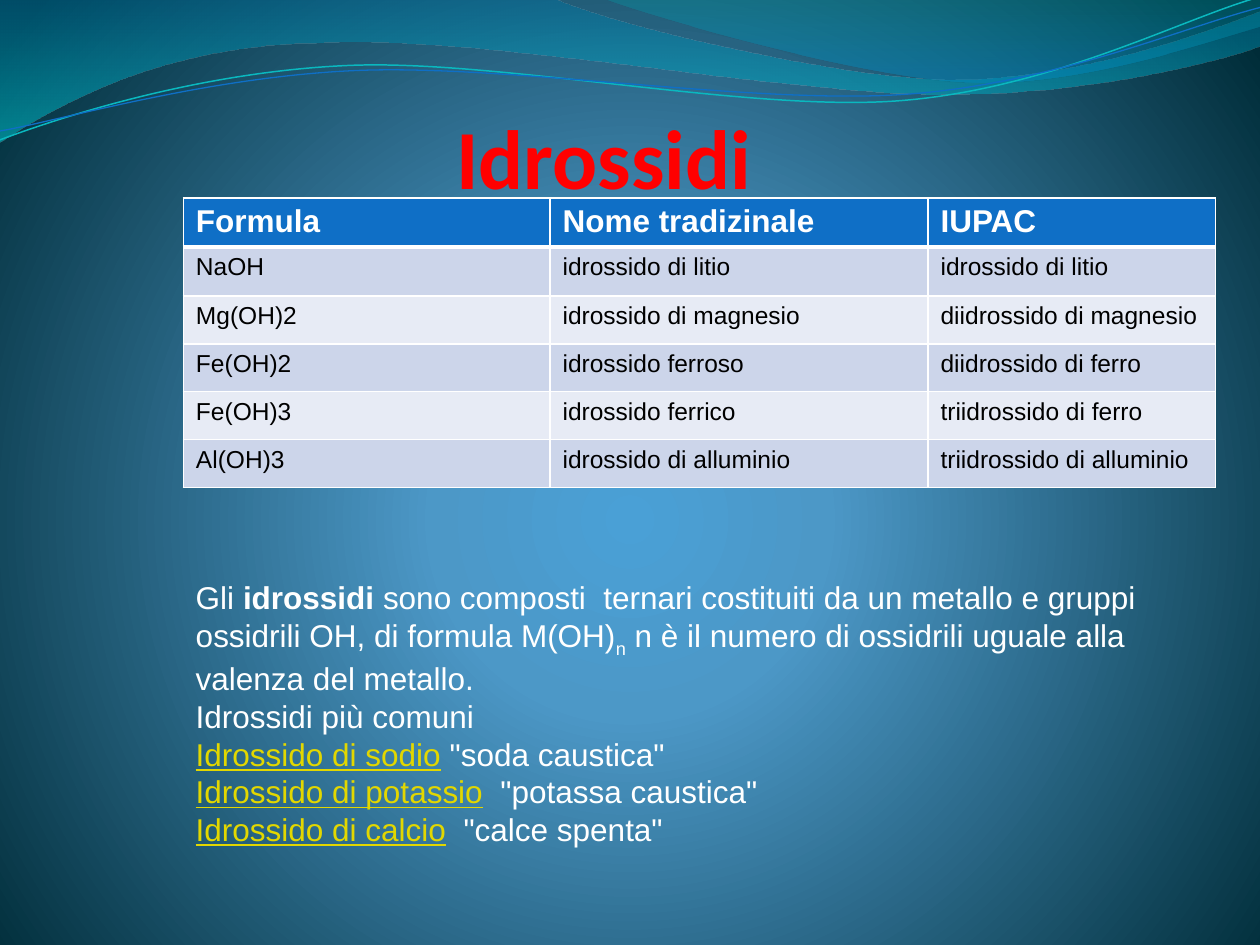
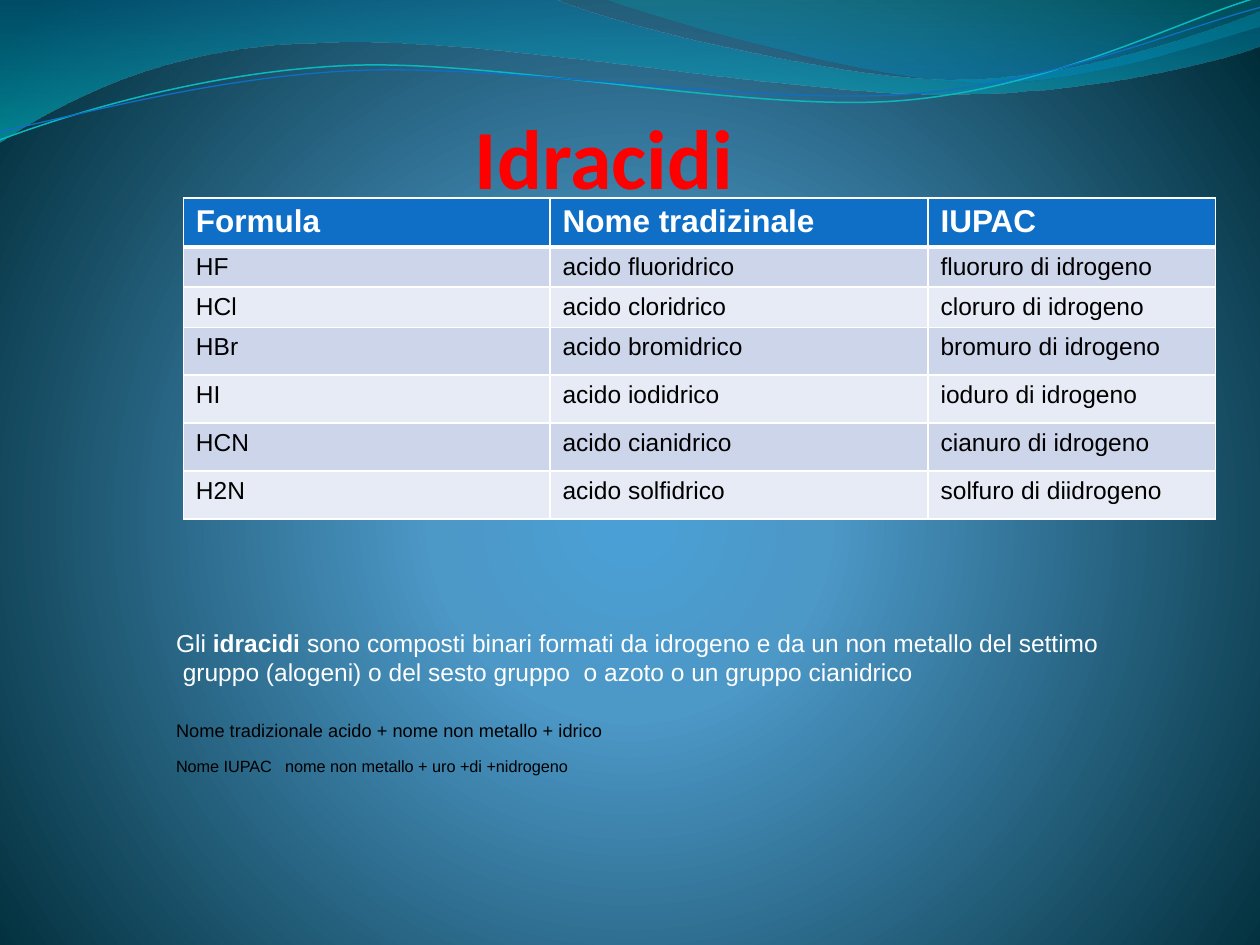
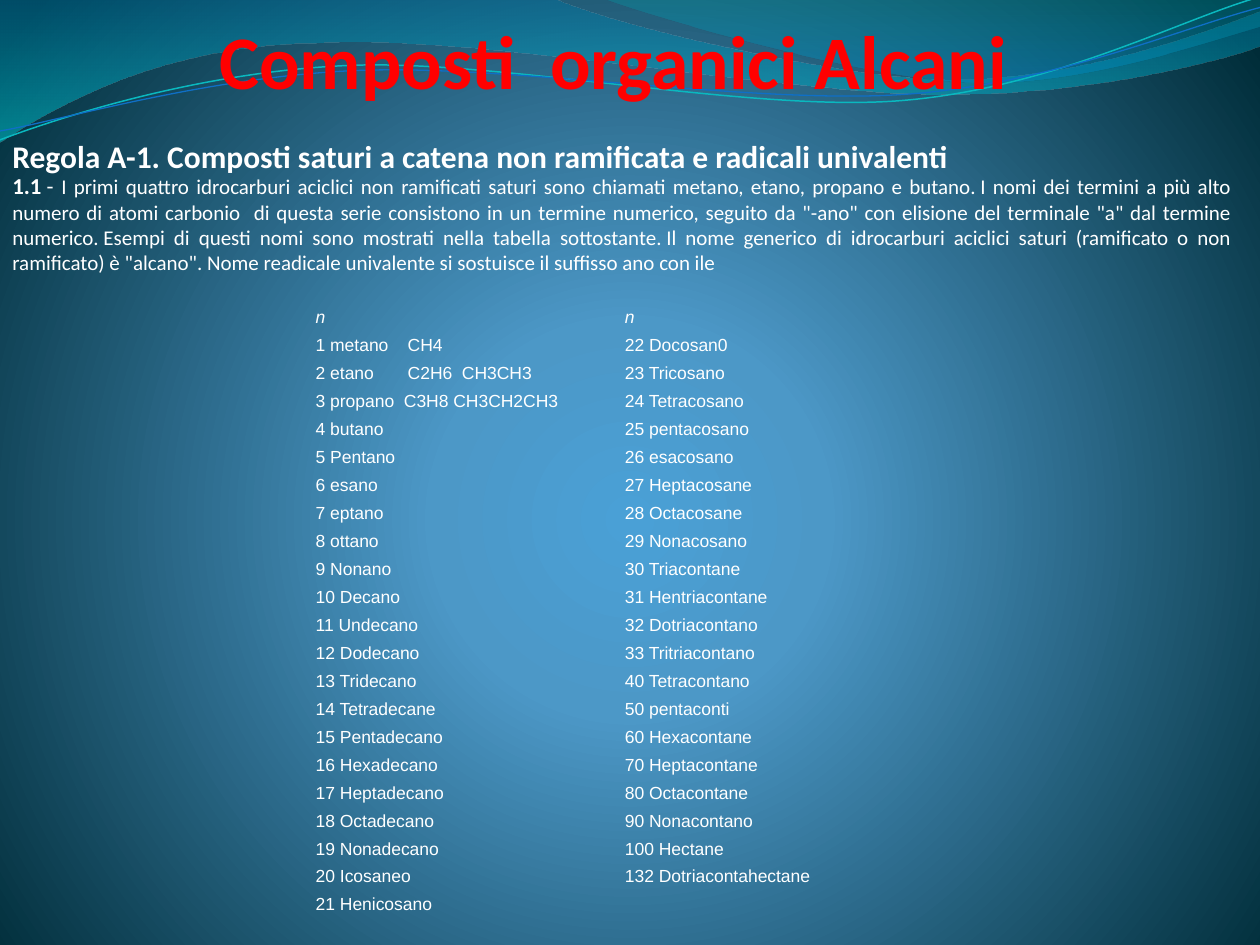
from dataclasses import dataclass
from itertools import zip_longest
from math import cos, radians, sin
from typing import Optional

from lxml.etree import SubElement
from pptx import Presentation
from pptx.dml.color import RGBColor
from pptx.enum.text import MSO_ANCHOR, MSO_AUTO_SIZE, PP_ALIGN
from pptx.oxml import parse_xml
from pptx.oxml.ns import nsdecls, qn
from pptx.util import Pt

COLORS = {
    "title": "FF0000", "white": "FFFFFF", "black": "000000", "link": "E2D700",
    "header": "0F6FC6", "band_dark": "CCD5EA", "band_light": "E7EBF5",
    "center": "4AA0D6", "middle": "4C98C7", "edge": "002C38",
    "wave_blue": "0074A1", "wave_teal": "00C6CF",
    "crest_teal": "00A1A9", "crest_blue": "008BBF",
    "line_teal": "0AB8BF", "line_blue": "0F6FC6",
}
NO_GRID_STYLE = "{2D5ABB26-0587-4C30-8999-92F81FD0307C}"
HARD_SPACE = chr(160)
WAVE_TILT = 357.3
DOWNWARD = '<a:lin ang="5400000" scaled="0"/>'
CIRCULAR = ('<a:path path="circle"><a:fillToRect l="10000" t="110000" '
            'r="10000" b="100000"/></a:path>')
COMPOUND_HEADER = ("Formula", "Nome tradizinale", "IUPAC")


@dataclass
class Box:
    left: float
    top: float
    width: float
    height: float

    def lengths(self) -> tuple:
        return Pt(self.left), Pt(self.top), Pt(self.width), Pt(self.height)


@dataclass
class Stop:
    position: int
    color: str
    opacity: int = 100


@dataclass
class Wave:
    start: tuple
    segments: list
    stops: Optional[list] = None
    line_color: str = ""
    line_width: float = 0
    center: tuple = (0, 0)
    rotation: float = 0


@dataclass
class Span:
    text: str
    size: float
    color: str = "white"
    bold: bool = False
    italic: bool = False
    underline: bool = False
    baseline: int = 0
    font: str = "Arial"


@dataclass
class Block:
    spans: list
    align: PP_ALIGN = PP_ALIGN.LEFT
    space_before: float = 0


TITLE_BOX = Box(42, 44.6, 618.5, 73.5)
WAVES = [
    Wave((0, -0.7), [
        (316.8, -0.7),
        (342.7, 12.2, 478.1, 45.4, 545.8, 45.4),
        (614.2, 45.4, 689.8, 18.7, 720, 6.5),
        (720.7, 25.9),
        (707.8, 31.7, 626.4, 54.7, 537.1, 54),
        (447.8, 54, 275, 20.2, 185, 24.5),
        (92.9, 25.2, 33.1, 59.8, -0.7, 81.4),
        (0, -0.7),
    ], stops=[Stop(0, "wave_blue", 45), Stop(100, "wave_teal", 55)]),
    Wave((344.9, -0.7), [
        (366.5, 7.9, 491, 44.6, 553.7, 46.8),
        (616.3, 49.7, 691.9, 23, 720, 15.1),
        (720, 0),
        (344.9, -0.7),
    ], stops=[Stop(0, "crest_teal", 30), Stop(80, "crest_blue", 45)]),
    Wave((0, 79.9), [
        (34.6, 67, 113.8, 41, 199.4, 37.4),
        (284.4, 33.8, 427, 64.1, 513.4, 57.6),
        (599.8, 51.1, 675.4, 10.8, 718.6, -1.4),
    ], line_color="line_teal", line_width=0.85,
        center=(359.3, 41.4), rotation=WAVE_TILT),
    Wave((0, 74.9), [
        (33.8, 69.1, 118.1, 43.9, 203.8, 40.3),
        (290.2, 36.7, 429.8, 59.8, 516.2, 54),
        (601.9, 48.2, 677.5, 15.1, 720, 4.3),
    ], line_color="line_blue", line_width=0.75,
        center=(359.6, 42.5), rotation=WAVE_TILT),
]

HYDROXIDES = [
    ("NaOH", "idrossido di litio", "idrossido di litio"),
    ("Mg(OH)2", "idrossido di magnesio", "diidrossido di magnesio"),
    ("Fe(OH)2", "idrossido ferroso", "diidrossido di ferro"),
    ("Fe(OH)3", "idrossido ferrico", "triidrossido di ferro"),
    ("Al(OH)3", "idrossido di alluminio", "triidrossido di alluminio"),
]
HYDRACIDS = [
    ("HF", "acido fluoridrico", "fluoruro di idrogeno"),
    ("HCl", "acido cloridrico", "cloruro di idrogeno"),
    ("HBr", "acido bromidrico", "bromuro di idrogeno"),
    ("HI", "acido iodidrico", "ioduro di idrogeno"),
    ("HCN", "acido cianidrico", "cianuro di idrogeno"),
    ("H2N", "acido solfidrico", "solfuro di diidrogeno"),
]
COMMON_HYDROXIDES = [
    ("Idrossido di sodio", f'{HARD_SPACE}"soda caustica"'),
    ("Idrossido di potassio", f'{HARD_SPACE} "potassa caustica"'),
    ("Idrossido di calcio", f'{HARD_SPACE} "calce spenta"'),
]
ALKANES_LEFT = [
    "n", "1 metano    CH4", "2 etano       C2H6  CH3CH3",
    "3 propano  C3H8 CH3CH2CH3", "4 butano", "5 Pentano", "6 esano",
    "7 eptano", "8 ottano", "9 Nonano", "10 Decano", "11 Undecano",
    "12 Dodecano", "13 Tridecano", "14 Tetradecane", "15 Pentadecano",
    "16 Hexadecano", "17 Heptadecano", "18 Octadecano", "19 Nonadecano",
    "20 Icosaneo", "21 Henicosano",
]
ALKANES_RIGHT = [
    "n", "22 Docosan0", "23 Tricosano", "24 Tetracosano", "25 pentacosano",
    "26 esacosano", "27 Heptacosane", "28 Octacosane", "29 Nonacosano",
    "30 Triacontane", "31 Hentriacontane", "32 Dotriacontano",
    "33 Tritriacontano", "40 Tetracontano", "50 pentaconti",
    "60 Hexacontane", "70 Heptacontane", "80 Octacontane",
    "90 Nonacontano", "100 Hectane", "132 Dotriacontahectane",
]


def rgb(name: str) -> RGBColor:
    return RGBColor.from_string(COLORS[name])


def stop_xml(stop: Stop) -> str:
    alpha = f'<a:alpha val="{stop.opacity * 1000}"/>' if stop.opacity < 100 else ""
    return (f'<a:gs pos="{stop.position * 1000}">'
            f'<a:srgbClr val="{COLORS[stop.color]}">{alpha}</a:srgbClr></a:gs>')


def apply_gradient(properties, stops: list, direction: str) -> None:
    gradient = parse_xml(
        f'<a:gradFill {nsdecls("a")} rotWithShape="1">'
        f'<a:gsLst>{"".join(map(stop_xml, stops))}</a:gsLst>{direction}</a:gradFill>'
    )
    properties.replace(properties.find(qn("a:noFill")), gradient)


def level_point(point: tuple, wave: Wave) -> tuple:
    angle = radians(-wave.rotation)
    across, down = point[0] - wave.center[0], point[1] - wave.center[1]
    return (Pt(wave.center[0] + across * cos(angle) - down * sin(angle)),
            Pt(wave.center[1] + across * sin(angle) + down * cos(angle)))


def bend_segments(shape, segments: list) -> None:
    outline = shape.element.find(".//" + qn("a:path"))
    lines = iter(outline.findall(qn("a:lnTo")))
    for segment in segments:
        line = next(lines)
        if len(segment) == 2:
            continue
        curve = parse_xml(f'<a:cubicBezTo {nsdecls("a")}/>')
        line.addprevious(curve)
        for piece in (line, next(lines), next(lines)):
            curve.append(piece[0])
            outline.remove(piece)


def draw_wave(slide, wave: Wave):
    points = [wave.start]
    for segment in wave.segments:
        points += zip(segment[::2], segment[1::2])
    vertices = [level_point(point, wave) for point in points]
    builder = slide.shapes.build_freeform(*vertices[0])
    builder.add_line_segments(vertices[1:], close=bool(wave.stops))
    shape = builder.convert_to_shape()
    bend_segments(shape, wave.segments)
    shape.rotation = wave.rotation
    shape.shadow.inherit = False
    shape.fill.background()
    if wave.stops:
        shape.line.fill.background()
        apply_gradient(shape.element.spPr, wave.stops, DOWNWARD)
    else:
        shape.line.color.rgb = rgb(wave.line_color)
        shape.line.width = Pt(wave.line_width)
    return shape


def decorate_layout(slide) -> None:
    layout = slide.slide_layout
    layout.background.fill.background()
    stops = [Stop(0, "center"), Stop(25, "middle"), Stop(100, "edge")]
    apply_gradient(layout.element.find(".//" + qn("p:bgPr")), stops, CIRCULAR)
    for position, wave in enumerate(WAVES, start=2):
        layout.shapes.element.insert(position, draw_wave(slide, wave).element)


def format_run(run, span: Span) -> None:
    font = run.font
    font.name = span.font
    font.size = Pt(span.size)
    font.bold = span.bold
    font.italic = span.italic
    font.underline = span.underline
    font.color.rgb = rgb(span.color)
    if span.baseline:
        run._r.get_or_add_rPr().set("baseline", str(span.baseline * 1000))


def set_title(slide, text: str, size: float, box: Box) -> None:
    title = slide.shapes.title
    title.left, title.top, title.width, title.height = box.lengths()
    frame = title.text_frame
    frame.text = text
    frame.auto_size = MSO_AUTO_SIZE.NONE
    frame.word_wrap = True
    frame.vertical_anchor = MSO_ANCHOR.BOTTOM
    frame.margin_left = frame.margin_top = frame.margin_bottom = Pt(0)
    frame.margin_right = Pt(1.44)
    paragraph = frame.paragraphs[0]
    paragraph.alignment = PP_ALIGN.CENTER
    format_run(paragraph.runs[0], Span(text, size, "title", bold=True, font="Calibri"))


def add_text(slide, box: Box, blocks: list, anchor=MSO_ANCHOR.TOP) -> None:
    frame = slide.shapes.add_textbox(*box.lengths()).text_frame
    frame.word_wrap = True
    frame.auto_size = MSO_AUTO_SIZE.SHAPE_TO_FIT_TEXT
    frame.vertical_anchor = anchor
    for index, block in enumerate(blocks):
        paragraph = frame.add_paragraph() if index else frame.paragraphs[0]
        paragraph.alignment = block.align
        if block.space_before:
            paragraph.space_before = Pt(block.space_before)
        for span in block.spans:
            run = paragraph.add_run()
            run.text = span.text
            format_run(run, span)


def write_cell(cell, span: Span) -> None:
    cell.text_frame.text = span.text
    for run in cell.text_frame.paragraphs[0].runs:
        format_run(run, span)


def add_borders(cell, bottom_width: float) -> None:
    properties = cell._tc.get_or_add_tcPr()
    widths = {"lnL": 1, "lnR": 1, "lnT": 1, "lnB": bottom_width}
    for position, (side, width) in enumerate(widths.items()):
        border = SubElement(properties, qn("a:" + side), w=str(Pt(width)))
        fill = SubElement(border, qn("a:solidFill"))
        SubElement(fill, qn("a:srgbClr"), val=COLORS["white"])
        properties.insert(position, border)


def add_grid(slide, left: float, top: float, widths: list, heights: list):
    box = Box(left, top, sum(widths), sum(heights))
    table = slide.shapes.add_table(len(heights), len(widths), *box.lengths()).table
    for column, width in zip(table.columns, widths):
        column.width = Pt(width)
    for row, height in zip(table.rows, heights):
        row.height = Pt(height)
    return table


def add_compound_table(slide, compounds: list, heights: list) -> None:
    table = add_grid(slide, 104.8, 113.1, [209.5, 216, 164.2], heights)
    for row, texts in enumerate([COMPOUND_HEADER] + compounds):
        is_header = row == 0
        fill = "header" if is_header else "band_dark" if row % 2 else "band_light"
        for column, text in enumerate(texts):
            cell = table.cell(row, column)
            cell.fill.solid()
            cell.fill.fore_color.rgb = rgb(fill)
            add_borders(cell, 3 if is_header else 1)
            write_cell(cell, Span(text, 18, bold=True) if is_header
                       else Span(text, 14, "black"))


def add_alkane_table(slide) -> None:
    rows = list(zip_longest(ALKANES_LEFT, ALKANES_RIGHT, fillvalue=""))
    table = add_grid(slide, 176.8, 173.4, [176.7] * 2, [16] * len(rows))
    table.first_row = table.horz_banding = False
    table._tbl.tblPr.find(qn("a:tableStyleId")).text = NO_GRID_STYLE
    for row, texts in enumerate(rows):
        for column, text in enumerate(texts):
            cell = table.cell(row, column)
            cell.fill.background()
            cell.vertical_anchor = MSO_ANCHOR.MIDDLE
            cell.margin_left = cell.margin_right = Pt(3.6)
            cell.margin_top = cell.margin_bottom = Pt(1.8)
            if text:
                write_cell(cell, Span(text, 10, italic=row == 0))
            else:
                cell.text_frame.paragraphs[0].font.size = Pt(10)


def build_hydroxides(slide) -> None:
    set_title(slide, "Idrossidi ", 48, TITLE_BOX)
    add_compound_table(slide, HYDROXIDES, [28] * 2 + [27.4] * 4)
    definition = Block([
        Span(f"Gli{HARD_SPACE}", 18),
        Span("idrossidi", 18, bold=True),
        Span(f"{HARD_SPACE}sono{HARD_SPACE}composti{HARD_SPACE * 2}ternari costituiti "
             f"da un{HARD_SPACE}metallo e gruppi ossidrili OH,{HARD_SPACE}di formula "
             "M(OH)", 18),
        Span("n", 18, baseline=-25),
        Span(" n è il numero di ossidrili uguale alla valenza del metallo.", 18),
    ])
    examples = [
        Block([Span(name, 18, "link", underline=True), Span(common_name, 18)])
        for name, common_name in COMMON_HYDROXIDES
    ]
    add_text(slide, Box(104.8, 326.9, 561.6, 181.4),
             [definition, Block([Span("Idrossidi più comuni", 18)])] + examples)


def build_hydracids(slide) -> None:
    set_title(slide, "Idracidi ", 48, TITLE_BOX)
    add_compound_table(slide, HYDRACIDS, [28] + [14] * 2 + [27.4] * 4)
    add_text(slide, Box(93.5, 355.3, 555.8, 112.3), [
        Block([
            Span(f"Gli{HARD_SPACE}", 14),
            Span("idracidi", 14, bold=True),
            Span(f"{HARD_SPACE}sono{HARD_SPACE}composti binari formati da{HARD_SPACE}"
                 f"idrogeno{HARD_SPACE}e da un{HARD_SPACE}non metallo{HARD_SPACE}del "
                 f"settimo  {HARD_SPACE}gruppo (alogeni) o del sesto gruppo "
                 f"{HARD_SPACE}o azoto{HARD_SPACE}o un gruppo cianidrico", 14),
        ]),
        Block([Span("Nome tradizionale acido + nome non metallo + idrico",
                    18, "black", baseline=30)], space_before=16.2),
        Block([Span("Nome IUPAC   nome non metallo + uro +di +nidrogeno",
                    16, "black", baseline=30)]),
    ])


def build_alkanes(slide) -> None:
    set_title(slide, "Composti  organici Alcani", 43.2, Box(42, 44.6, 618.5, 15.2))
    add_text(slide, Box(0, 74.8, 711.4, 29), [Block([
        Span(f"Regola A-1.{HARD_SPACE}Composti saturi a catena non ramificata e "
             "radicali univalenti", 18, bold=True, font="Calibri"),
    ])], MSO_ANCHOR.MIDDLE)
    add_text(slide, Box(0, 94.2, 711.4, 67), [Block([
        Span("1.1", 13, bold=True, font="Calibri"),
        Span(f"{HARD_SPACE}- ", 13, font="Calibri"),
        Span("I primi quattro idrocarburi aciclici non ramificati saturi sono "
             f"chiamati metano, etano, propano e butano.{HARD_SPACE}I nomi dei "
             "termini a più alto numero di atomi carbonio  di questa serie "
             'consistono in un termine numerico, seguito da "-ano" con elisione del '
             f'terminale "a" dal termine numerico.{HARD_SPACE}Esempi di questi nomi '
             f"sono mostrati nella tabella sottostante.{HARD_SPACE}Il nome generico "
             "di idrocarburi aciclici saturi (ramificato o non ramificato) è "
             '"alcano". Nome readicale univalente si sostuisce il suffisso ano con '
             "ile ", 12, font="Calibri"),
    ], PP_ALIGN.JUSTIFY)], MSO_ANCHOR.MIDDLE)
    add_alkane_table(slide)


def main() -> None:
    presentation = Presentation()
    presentation.slide_width, presentation.slide_height = Pt(720), Pt(540)
    layout = presentation.slide_layouts[5]
    builders = (build_hydroxides, build_hydracids, build_alkanes)
    slides = [presentation.slides.add_slide(layout) for _ in builders]
    decorate_layout(slides[0])
    for build, slide in zip(builders, slides):
        build(slide)
    presentation.save("out.pptx")


if __name__ == "__main__":
    main()
